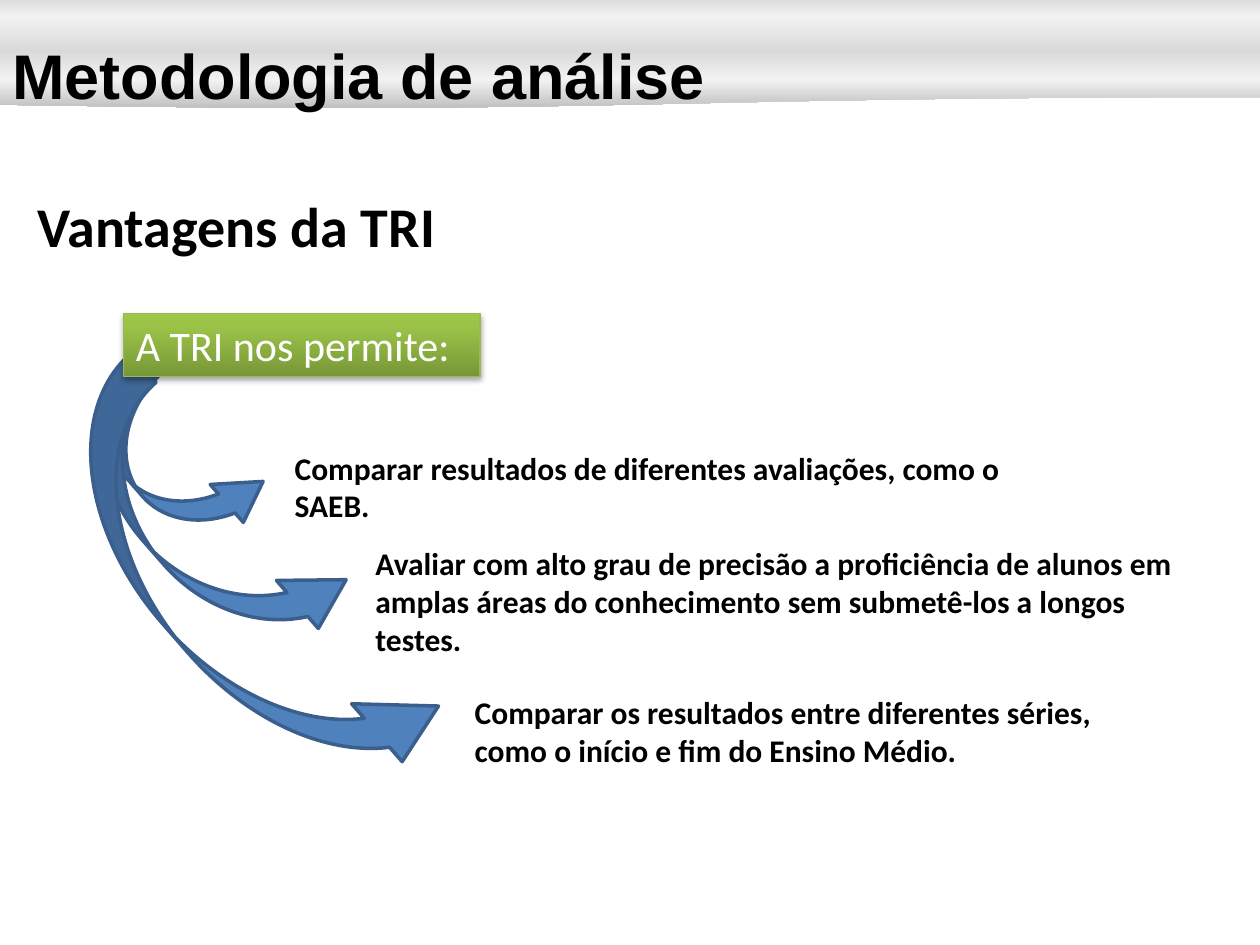
from dataclasses import dataclass

from lxml.etree import SubElement
from pptx import Presentation
from pptx.dml.color import RGBColor
from pptx.enum.shapes import MSO_SHAPE
from pptx.enum.text import MSO_ANCHOR, MSO_AUTO_SIZE, PP_ALIGN
from pptx.oxml.ns import qn
from pptx.util import Cm, Pt


@dataclass(frozen=True)
class Theme:
    text: str = "000000"
    light_text: str = "FFFFFF"
    arrow_fill: str = "4F81BD"
    arrow_line: str = "3A5F8C"
    label_line: str = "98B955"
    shadow: str = "000000"
    label_stops: tuple = ((0, "779737"), (80, "9BC348"), (100, "9DC746"))
    header_stops: tuple = ((0, "D9D9D9"), (50, "F2F2F2"), (100, "BFBFBF"))
    title_font: str = "Arial"
    body_font: str = "Calibri"
    title_size: int = 36
    heading_size: int = 32
    label_size: int = 24
    body_size: int = 18


class SlideBuilder:
    def __init__(self, slide, theme):
        self.slide = slide
        self.theme = theme

    def shape(self, kind, box, parent=None):
        shapes = (parent or self.slide).shapes
        shape = shapes.add_shape(kind, *map(Cm, box))
        shape.shadow.inherit = False
        return shape

    def set_text(self, shape, text, size, font=None, color=None, bold=True,
                 anchor=MSO_ANCHOR.TOP, grow=False):
        frame = shape.text_frame
        frame.word_wrap = True
        frame.vertical_anchor = anchor
        frame.auto_size = MSO_AUTO_SIZE.SHAPE_TO_FIT_TEXT if grow else MSO_AUTO_SIZE.NONE
        paragraph = frame.paragraphs[0]
        paragraph.text = text
        paragraph.alignment = PP_ALIGN.LEFT
        paragraph.font.name = font or self.theme.body_font
        paragraph.font.size = Pt(size)
        paragraph.font.bold = bold
        paragraph.font.color.rgb = RGBColor.from_string(color or self.theme.text)

    def text(self, box, text, size, grow=False):
        text_box = self.slide.shapes.add_textbox(*map(Cm, box))
        self.set_text(text_box, text, size, grow=grow)

    def outline(self, shape, color, width):
        shape.line.color.rgb = RGBColor.from_string(color)
        shape.line.width = Pt(width)

    def gradient(self, shape, stops, angle):
        shape.fill.gradient()
        shape.fill.gradient_angle = angle
        stop_list = shape._element.spPr.find(qn("a:gradFill")).find(qn("a:gsLst"))
        for stop in list(stop_list):
            stop_list.remove(stop)
        for position, color in stops:
            stop = SubElement(stop_list, qn("a:gs"), pos=str(position * 1000))
            SubElement(stop, qn("a:srgbClr"), val=color)

    def arrow(self, box):
        arrow = self.shape(MSO_SHAPE.CURVED_UP_ARROW, box)
        arrow.rotation = 48.9
        arrow.adjustments[2] = 0.416
        arrow.fill.solid()
        arrow.fill.fore_color.rgb = RGBColor.from_string(self.theme.arrow_fill)
        self.outline(arrow, self.theme.arrow_line, 2)

    def label(self, box, text):
        label = self.shape(MSO_SHAPE.RECTANGLE, box)
        self.gradient(label, self.theme.label_stops, 90)
        self.outline(label, self.theme.label_line, 0.75)
        effects = label._element.spPr.find(qn("a:effectLst"))
        shadow = SubElement(effects, qn("a:outerShdw"), blurRad=str(Pt(3.1)),
                            dist=str(Pt(1.8)), dir="5400000", rotWithShape="0")
        color = SubElement(shadow, qn("a:srgbClr"), val=self.theme.shadow)
        SubElement(color, qn("a:alpha"), val="35000")
        self.set_text(label, text, self.theme.label_size, color=self.theme.light_text,
                      bold=False, grow=True)

    def header(self, title):
        group = self.slide.shapes.add_group_shape()
        upper, lower = [
            self.shape(MSO_SHAPE.FLOWCHART_DOCUMENT, box, group)
            for box in ((0, -0.41, 25.4, 1.47), (0, 1.02, 25.4, 1.17))
        ]
        for band in (upper, lower):
            self.gradient(band, self.theme.header_stops, 270)
            band.line.fill.background()
        upper._element.spPr.find(qn("a:xfrm")).set("flipV", "1")
        self.set_text(lower, title, self.theme.title_size, font=self.theme.title_font,
                      anchor=MSO_ANCHOR.MIDDLE)


def main():
    presentation = Presentation()
    presentation.slide_width = Cm(25.4)
    presentation.slide_height = Cm(19.05)
    theme = Theme()
    slide = presentation.slides.add_slide(presentation.slide_layouts[6])
    builder = SlideBuilder(slide, theme)

    # Arrows from the label to each advantage
    for box in ((1.55, 8.23, 4.01, 2.03),
                (0.69, 9.12, 6.93, 2.57),
                (-0.28, 10.44, 10.21, 3.1)):
        builder.arrow(box)

    # Label
    builder.label((2.49, 6.32, 7.19, 1.27), "A TRI nos permite:")

    # Advantages
    advantages = (
        ((5.69, 8.92, 15.19, 1.8),
         "Comparar resultados de diferentes avaliações, como o SAEB."),
        ((7.32, 10.85, 17.2, 2.57),
         "Avaliar com alto grau de precisão a proficiência de alunos em amplas "
         "áreas do conhecimento sem submetê-los a longos testes."),
        ((9.32, 13.84, 14.5, 1.8),
         "Comparar os resultados entre diferentes séries, como o início e fim "
         "do Ensino Médio."),
    )
    for box, text in advantages:
        builder.text(box, text, theme.body_size, grow=True)

    # Heading and header band
    builder.text((0.51, 3.73, 22.86, 3.18), "Vantagens da TRI", theme.heading_size)
    builder.header("Metodologia de análise")

    presentation.save("out.pptx")


if __name__ == "__main__":
    main()
